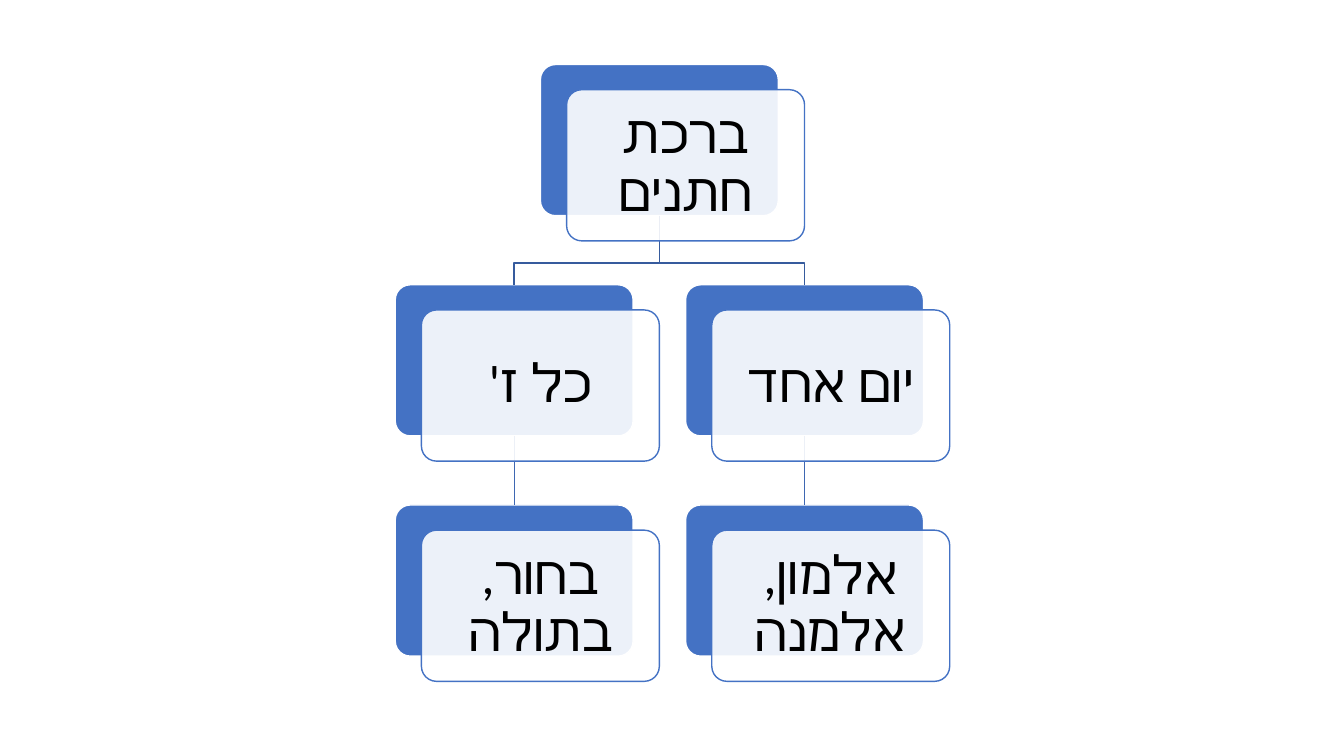
from dataclasses import dataclass

from lxml.etree import SubElement
from pptx import Presentation
from pptx.dml.color import RGBColor
from pptx.enum.shapes import MSO_CONNECTOR, MSO_SHAPE
from pptx.enum.text import MSO_ANCHOR, PP_ALIGN
from pptx.oxml.ns import qn
from pptx.shapes.autoshape import Shape
from pptx.slide import Slide
from pptx.util import Inches, Pt


@dataclass(frozen=True)
class Theme:
    blue: RGBColor = RGBColor(0x44, 0x72, 0xC4)
    branch: RGBColor = RGBColor(0x36, 0x5B, 0x9D)
    stem: RGBColor = RGBColor(0x3E, 0x67, 0xB2)
    white: RGBColor = RGBColor(0xFF, 0xFF, 0xFF)
    black: RGBColor = RGBColor(0x00, 0x00, 0x00)
    font: str = "Calibri"
    text_size: Pt = Pt(38)
    line_width: Pt = Pt(1)


@dataclass(frozen=True)
class Node:
    text: str
    column: float
    row: int
    parent: int | None = None

    @property
    def left(self) -> float:
        return LEFT + self.column * COLUMN_STEP

    @property
    def top(self) -> float:
        return TOP + self.row * ROW_STEP


THEME = Theme()
LEFT, TOP = 3.92, 0.64
COLUMN_STEP, ROW_STEP = 2.88, 2.185
CARD_WIDTH, CARD_HEIGHT = 2.36, 1.5
FRONT_OFFSET_X, FRONT_OFFSET_Y = 0.26, 0.25
BEND_DROP = 0.47
TEXT_INSET = 0.16

NODES = [
    Node("ברכת חתנים", 0.5, 0),
    Node("כל ז'", 0, 1, parent=0),
    Node("בחור, בתולה", 0, 2, parent=1),
    Node("יום אחד", 1, 1, parent=0),
    Node("אלמון, אלמנה", 1, 2, parent=3),
]


def add_card(slide: Slide, left: float, top: float, fill: RGBColor, line: RGBColor) -> Shape:
    card = slide.shapes.add_shape(
        MSO_SHAPE.ROUNDED_RECTANGLE,
        Inches(left), Inches(top), Inches(CARD_WIDTH), Inches(CARD_HEIGHT),
    )
    card.adjustments[0] = 0.1
    card.shadow.inherit = False
    card.fill.solid()
    card.fill.fore_color.rgb = fill
    card.line.color.rgb = line
    card.line.width = THEME.line_width
    return card


def add_front_card(slide: Slide, node: Node) -> None:
    card = add_card(
        slide, node.left + FRONT_OFFSET_X, node.top + FRONT_OFFSET_Y, THEME.white, THEME.blue
    )
    color = card.fill._xPr.find(qn("a:solidFill"))[0]
    SubElement(color, qn("a:alpha"), val="90000")
    write_text(card, node.text)


def write_text(card: Shape, text: str) -> None:
    """Centre right-to-left text in the card."""
    frame = card.text_frame
    frame.word_wrap = True
    frame.vertical_anchor = MSO_ANCHOR.MIDDLE
    frame.margin_left = frame.margin_right = Inches(TEXT_INSET)
    frame.margin_top = frame.margin_bottom = Inches(TEXT_INSET)
    paragraph = frame.paragraphs[0]
    paragraph.alignment = PP_ALIGN.CENTER
    paragraph.line_spacing = 0.9
    properties = paragraph._p.get_or_add_pPr()
    properties.set("rtl", "1")
    space_after = SubElement(properties, qn("a:spcAft"))
    SubElement(space_after, qn("a:spcPct"), val="35000")
    run = paragraph.add_run()
    run.text = text
    run.font.name = THEME.font
    run.font.size = THEME.text_size
    run.font.color.rgb = THEME.black
    SubElement(run._r.get_or_add_rPr(), qn("a:cs"), typeface=THEME.font)


def add_stem(slide: Slide, parent: Shape, child: Shape) -> None:
    """Join a card to the one straight below it."""
    stem = slide.shapes.add_connector(MSO_CONNECTOR.STRAIGHT, 0, 0, 0, 0)
    stem.begin_connect(parent, 2)
    stem.end_connect(child, 0)
    stem.line.color.rgb = THEME.stem
    stem.line.width = THEME.line_width
    SubElement(stem._element.spPr, qn("a:effectLst"))


def add_branch(slide: Slide, parent: Node, child: Node) -> None:
    """Join a card to one below and to its side, with two bends."""
    start_x, end_x = (Inches(node.left + CARD_WIDTH / 2) for node in (parent, child))
    start_y = Inches(parent.top + CARD_HEIGHT)
    bend_y = start_y + Inches(BEND_DROP)
    builder = slide.shapes.build_freeform(start_x, start_y)
    builder.add_line_segments(
        [(start_x, bend_y), (end_x, bend_y), (end_x, Inches(child.top))], close=False
    )
    branch = builder.convert_to_shape()
    branch.shadow.inherit = False
    branch.fill.background()
    branch.line.color.rgb = THEME.branch
    branch.line.width = THEME.line_width


def main() -> None:
    presentation = Presentation()
    presentation.slide_width = Inches(13.33)
    presentation.slide_height = Inches(7.5)
    slide = presentation.slides.add_slide(presentation.slide_layouts[6])

    back_cards = [
        add_card(slide, node.left, node.top, THEME.blue, THEME.white) for node in NODES
    ]
    for node, card in zip(NODES, back_cards):
        if node.parent is None:
            continue
        parent = NODES[node.parent]
        if parent.column == node.column:
            add_stem(slide, back_cards[node.parent], card)
        else:
            add_branch(slide, parent, node)
    for node in NODES:
        add_front_card(slide, node)

    presentation.save("out.pptx")


if __name__ == "__main__":
    main()
